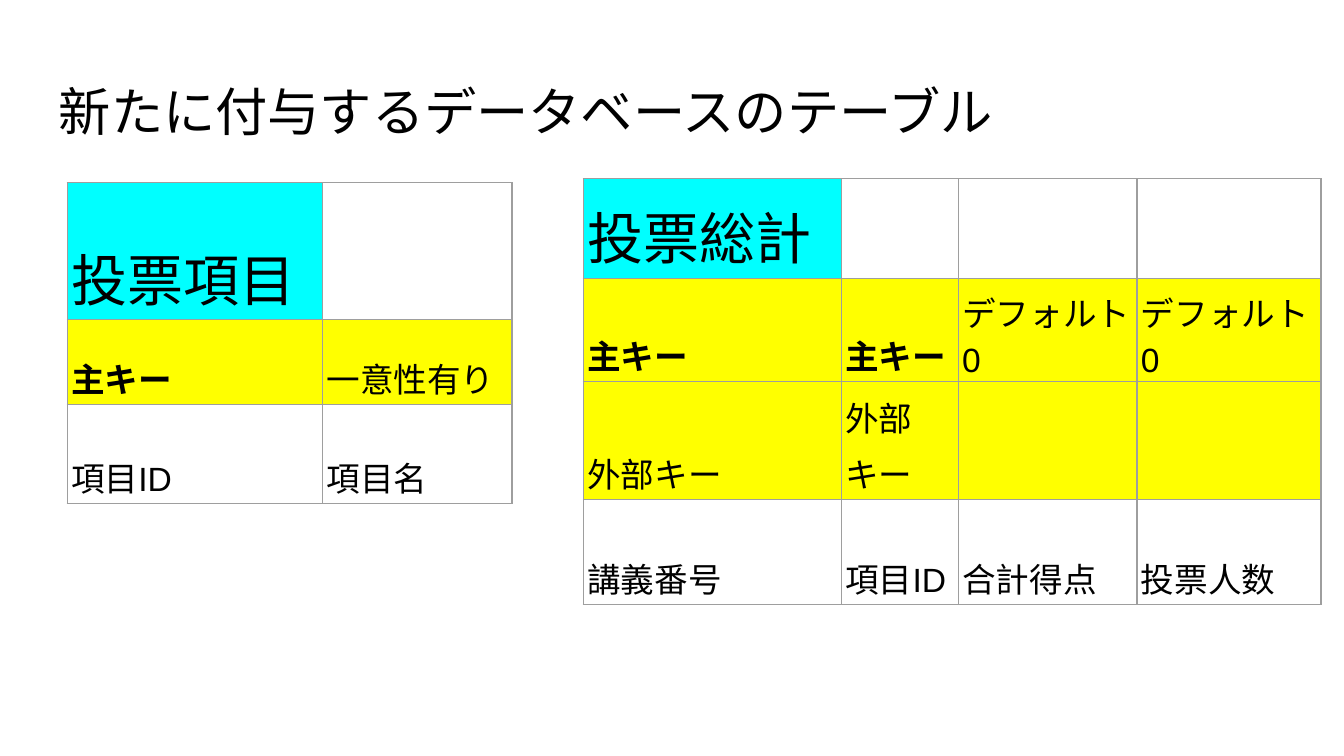
from lxml.etree import SubElement
from pptx import Presentation
from pptx.dml.color import RGBColor
from pptx.enum.text import MSO_ANCHOR
from pptx.oxml.ns import qn
from pptx.util import Inches, Pt

COLORS = {
    "text": "000000",
    "title": "00FFFF",
    "key": "FFFF00",
    "plain": "FFFFFF",
    "border": "9E9E9E",
}
FONT = "Arial"


def write_text(frame, text, size=18, bold=False, spacing=1.0):
    """Write one formatted paragraph into a text frame."""
    para = frame.paragraphs[0]
    para.line_spacing = spacing
    span = para.add_run()
    span.text = text
    span.font.name = FONT
    span.font.size = Pt(size)
    span.font.bold = bold
    span.font.color.rgb = RGBColor.from_string(COLORS["text"])


def add_title(page, text):
    """Add the heading of the slide."""
    box = page.shapes.add_textbox(Inches(0.34), Inches(0.49), Inches(9.32), Inches(0.63))
    frame = box.text_frame
    frame.word_wrap = True
    frame.vertical_anchor = MSO_ANCHOR.MIDDLE
    frame.margin_left = frame.margin_right = Inches(0.1)
    frame.margin_top = Inches(0.1)
    frame.margin_bottom = Inches(0.06)
    write_text(frame, text, size=28)


def fill_cell(cell, color):
    """Give a cell a solid fill and thin borders."""
    properties = cell._tc.get_or_add_tcPr()
    for side in ("a:lnL", "a:lnR", "a:lnT", "a:lnB"):
        line = SubElement(properties, qn(side), w=str(Pt(0.75)))
        solid = SubElement(line, qn("a:solidFill"))
        SubElement(solid, qn("a:srgbClr"), val=COLORS["border"])
    cell.fill.solid()
    cell.fill.fore_color.rgb = RGBColor.from_string(COLORS[color])


def cell_color(row, column, last_row):
    """Choose the fill by the role of the row."""
    if row == 0:
        return "title" if column == 0 else "plain"
    return "plain" if row == last_row else "key"


def add_schema(page, left, top, widths, heights, rows):
    """Add a table that describes one database table."""
    table = page.shapes.add_table(
        len(rows), len(widths), Inches(left), Inches(top),
        Inches(sum(widths)), Inches(sum(heights)),
    ).table
    table.first_row = table.horz_banding = False
    for column, width in zip(table.columns, widths):
        column.width = Inches(width)
    for row, height in zip(table.rows, heights):
        row.height = Inches(height)
    for i, texts in enumerate(rows):
        for j, text in enumerate(texts):
            cell = table.cell(i, j)
            fill_cell(cell, cell_color(i, j, len(rows) - 1))
            cell.vertical_anchor = MSO_ANCHOR.BOTTOM
            cell.margin_left = cell.margin_right = Inches(0.03)
            cell.margin_top = cell.margin_bottom = Inches(0.02)
            if text:
                size = 30 if i == 0 else 18
                write_text(cell.text_frame, text, size=size, bold=text == "主キー", spacing=1.15)


def main():
    """Build the slide and save the deck."""
    deck = Presentation()
    deck.slide_width = Inches(10)
    deck.slide_height = deck.slide_width * 9 // 16
    page = deck.slides.add_slide(deck.slide_layouts[6])
    add_title(page, "新たに付与するデータベースのテーブル")
    add_schema(page, 0.5, 1.36, [1.9, 1.41], [1.02, 0.63, 0.74], [
        ["投票項目", ""],
        ["主キー", "一意性有り"],
        ["項目ID", "項目名"],
    ])
    add_schema(page, 4.34, 1.33, [1.92, 0.87, 1.33, 1.37], [0.74, 0.77, 0.88, 0.78], [
        ["投票総計", "", "", ""],
        ["主キー", "主キー", "デフォルト 0", "デフォルト 0"],
        ["外部キー", "外部キー", "", ""],
        ["講義番号", "項目ID", "合計得点", "投票人数"],
    ])
    deck.save("out.pptx")


if __name__ == "__main__":
    main()
